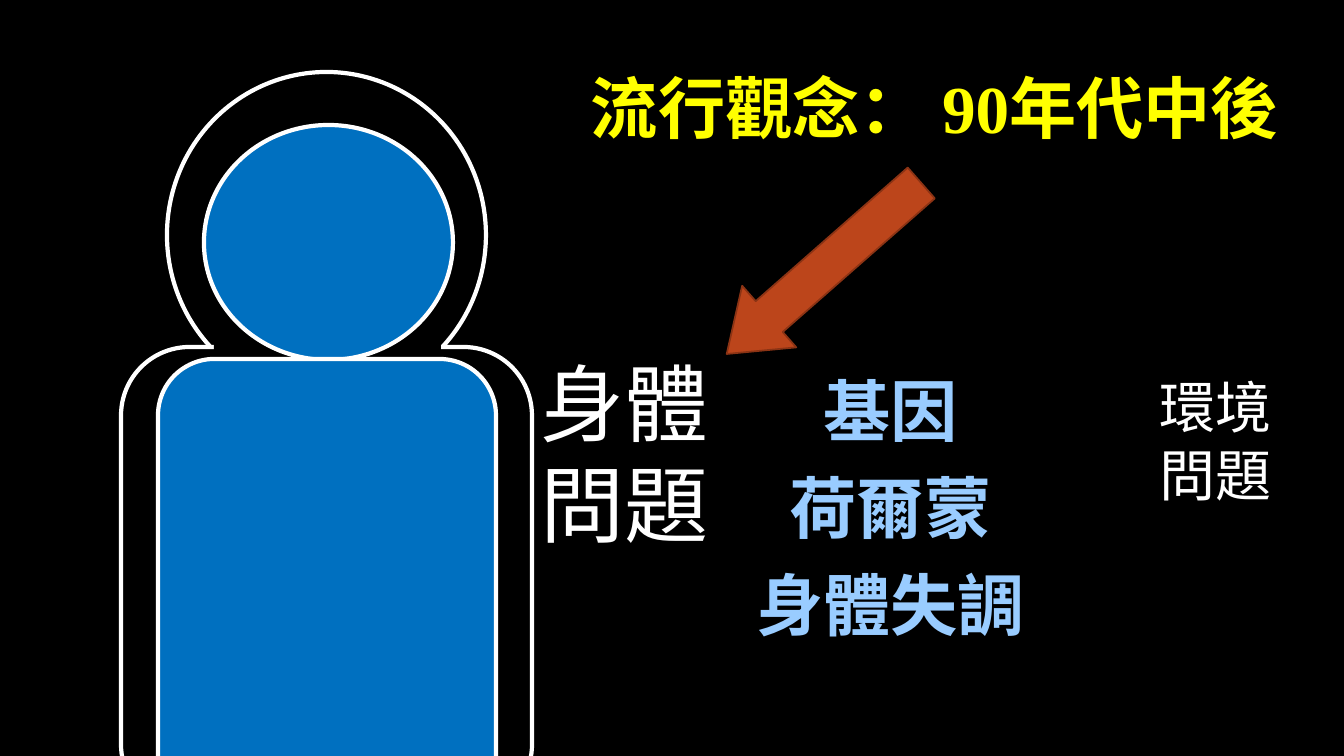
"""Build a slide on the popular view of illness since the mid 1990s."""
import dataclasses
import typing

import pptx
import pptx.dml.color
import pptx.enum.shapes
import pptx.enum.text
import pptx.util

KIND = pptx.enum.shapes.MSO_SHAPE
ALIGN = pptx.enum.text.PP_ALIGN
SCALE = 914400 / 100.8


@dataclasses.dataclass(frozen=True)
class Theme:
    black: str = "000000"
    white: str = "FFFFFF"
    blue: str = "0070C0"
    rust: str = "BC451B"
    brown: str = "8B3314"
    yellow: str = "FFFF00"
    sky: str = "99CCFF"
    sans: str = "Roboto"
    serif: str = "Times New Roman"
    large: int = 60
    mid: int = 48
    small: int = 40


THEME = Theme()


class Box(typing.NamedTuple):
    left: int
    top: int
    width: int
    height: int


@dataclasses.dataclass(frozen=True)
class Form:
    kind: KIND
    box: Box
    fill: str
    line: str | None = THEME.white
    weight: float = 3
    turn: float = 0
    adjust: tuple[float, ...] = ()


@dataclasses.dataclass(frozen=True)
class Label:
    box: Box
    lines: tuple[str, ...]
    size: int
    color: str
    font: str = THEME.sans
    bold: bool = False
    align: ALIGN = ALIGN.CENTER
    after: int = 0


FORMS = (
    Form(KIND.OVAL, Box(167, 72, 319, 326), THEME.black),
    Form(KIND.ROUNDED_RECTANGLE, Box(121, 347, 411, 466), THEME.black),
    Form(KIND.RECTANGLE, Box(214, 332, 227, 35), THEME.black, None),
    Form(KIND.OVAL, Box(204, 125, 249, 235), THEME.blue),
    Form(KIND.ROUNDED_RECTANGLE, Box(158, 359, 338, 457), THEME.blue),
    Form(KIND.DOWN_ARROW, Box(783, 139, 82, 259), THEME.rust, THEME.brown,
         1.25, 48.7, (0.5, 0.69)),
)
LABELS = (
    Label(Box(515, 347, 220, 214), ("身體", "問題"), THEME.large, THEME.white),
    Label(Box(1150, 368, 220, 146), ("環境", "問題"), THEME.small, THEME.white,
          align=ALIGN.LEFT),
    Label(Box(575, 61, 713, 92), ("流行觀念： 90年代中後",), THEME.mid,
          THEME.yellow, THEME.serif, True, ALIGN.RIGHT),
    Label(Box(734, 364, 313, 288), ("基因", "荷爾蒙", "身體失調"), THEME.mid,
          THEME.sky, THEME.serif, True, after=12),
)


def emu(px: int) -> pptx.util.Emu:
    return pptx.util.Emu(round(px * SCALE))


def place(box: Box) -> list[pptx.util.Emu]:
    return [emu(px) for px in box]


def tint(code: str) -> pptx.dml.color.RGBColor:
    return pptx.dml.color.RGBColor.from_string(code)


def style(target: typing.Any, values: dict[str, typing.Any]) -> None:
    for name, value in values.items():
        setattr(target, name, value)


def paint(fill: typing.Any, code: str) -> None:
    fill.solid()
    fill.fore_color.rgb = tint(code)


def draw(slide: typing.Any, form: Form) -> None:
    shape = slide.shapes.add_shape(form.kind, *place(form.box))
    shape.shadow.inherit = False
    shape.rotation = form.turn
    for spot, value in enumerate(form.adjust):
        shape.adjustments[spot] = value
    paint(shape.fill, form.fill)
    if form.line is None:
        shape.line.fill.background()
    else:
        paint(shape.line.fill, form.line)
        shape.line.width = pptx.util.Pt(form.weight)


def write(slide: typing.Any, label: Label) -> None:
    frame = slide.shapes.add_textbox(*place(label.box)).text_frame
    style(frame, {
        "text": "\n".join(label.lines),
        "word_wrap": True,
        "auto_size": pptx.enum.text.MSO_AUTO_SIZE.SHAPE_TO_FIT_TEXT,
    })
    for para in frame.paragraphs:
        style(para, {"alignment": label.align,
                     "space_after": pptx.util.Pt(label.after)})
        for run in para.runs:
            style(run.font, {"name": label.font, "bold": label.bold,
                             "size": pptx.util.Pt(label.size)})
            run.font.color.rgb = tint(label.color)


def main() -> None:
    deck = pptx.Presentation()
    style(deck, {"slide_width": emu(1344), "slide_height": emu(756)})
    slide = deck.slides.add_slide(deck.slide_layouts[6])
    paint(slide.background.fill, THEME.black)
    for form in FORMS:
        draw(slide, form)
    for label in LABELS:
        write(slide, label)
    deck.save("out.pptx")


if __name__ == "__main__":
    main()
